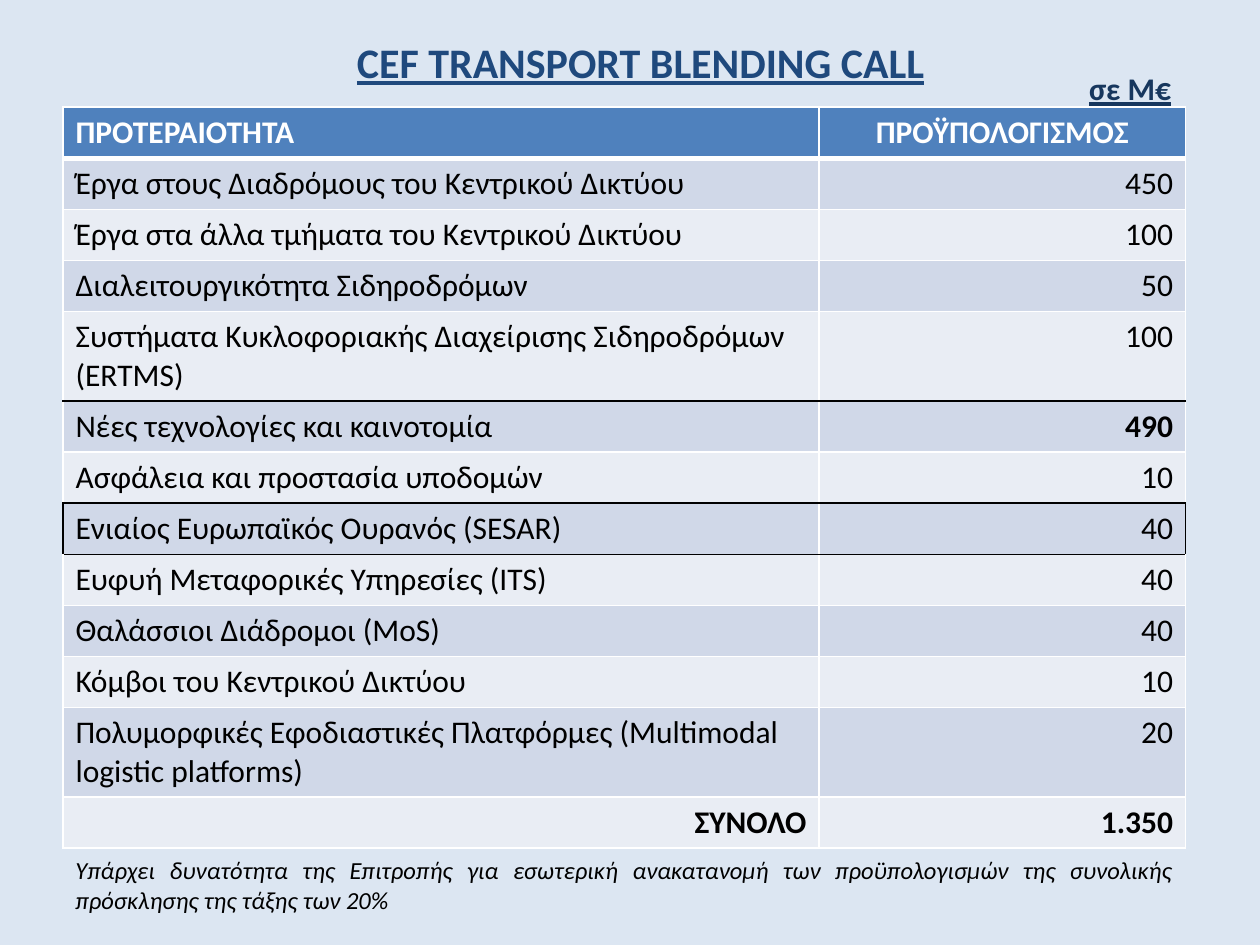
from dataclasses import dataclass
from lxml.etree import SubElement
from pptx import Presentation
from pptx.dml.color import RGBColor
from pptx.enum.text import MSO_ANCHOR as Anchor, MSO_AUTO_SIZE as AutoSize, PP_ALIGN as Align
from pptx.oxml.ns import qn
from pptx.util import Inches, Pt

TITLE = "CEF TRANSPORT BLENDING CALL"
UNIT = "σε Μ€"
NOTE = ("Υπάρχει δυνατότητα της Επιτροπής για εσωτερική ανακατανομή των "
        "προϋπολογισμών της συνολικής πρόσκλησης της τάξης των 20%")
HEADER = ("ΠΡΟΤΕΡΑΙΟΤΗΤΑ", "ΠΡΟΫΠΟΛΟΓΙΣΜΟΣ")
PRIORITIES = [
    ("Έργα στους Διαδρόμους του Κεντρικού Δικτύου", "450"),
    ("Έργα στα άλλα τμήματα του Κεντρικού Δικτύου", "100"),
    ("Διαλειτουργικότητα Σιδηροδρόμων", "50"),
    ("Συστήματα Κυκλοφοριακής Διαχείρισης Σιδηροδρόμων (ERTMS)", "100"),
    ("Νέες τεχνολογίες και καινοτομία", "490"),
    ("Ασφάλεια και προστασία υποδομών", "10"),
    ("Ενιαίος Ευρωπαϊκός Ουρανός (SESAR)", "40"),
    ("Ευφυή Μεταφορικές Υπηρεσίες (ITS)", "40"),
    ("Θαλάσσιοι Διάδρομοι (MoS)", "40"),
    ("Κόμβοι του Κεντρικού Δικτύου", "10"),
    ("Πολυμορφικές Εφοδιαστικές Πλατφόρμες (Μultimodal logistic platforms)", "20"),
]
TOTAL = ("ΣΥΝΟΛΟ", "1.350")
ROWS = [HEADER, *PRIORITIES, TOTAL]
LAST = len(ROWS) - 1
BOLD_VALUES = {"490"}
BLACK_RULES_BELOW = {4, 6, 7}
OUTLINED_ROW = 7


@dataclass(frozen=True)
class Theme:
    font: str = "Calibri"
    background: str = "DCE6F2"
    title: str = "1F497D"
    unit: str = "17375E"
    header: str = "4F81BD"
    bands: tuple = ("E9EDF4", "D0D8E8")
    white: str = "FFFFFF"
    black: str = "000000"
    title_size: int = 24
    table_size: int = 18
    note_size: int = 14


THEME = Theme()
LEFT, TABLE_TOP = 0.5, 0.85
COLUMNS = (6, 2.91)
TABLE_WIDTH, TABLE_HEIGHT = sum(COLUMNS), 5.86
ROW_HEIGHT = Pt(29.2)


def color(value):
    return RGBColor.from_string(value)


def write(frame, text, size, ink, align, bold=False, italic=False, underline=False):
    frame.text = text
    paragraph = frame.paragraphs[0]
    paragraph.alignment = align
    font = paragraph.font
    font.name, font.size = THEME.font, Pt(size)
    font.bold, font.italic, font.underline = bold, italic, underline
    font.color.rgb = color(ink)
    return paragraph


def add_label(slide, box, wrap):
    frame = slide.shapes.add_textbox(*map(Inches, box)).text_frame
    frame.word_wrap = wrap
    frame.auto_size = AutoSize.SHAPE_TO_FIT_TEXT
    return frame


def borders(row, column):
    def rule(index):
        return THEME.black if index in BLACK_RULES_BELOW else THEME.white

    side = THEME.black if row == OUTLINED_ROW else THEME.white
    return {
        "L": (side if column == 0 else THEME.white, 1),
        "R": (side if column == 1 else THEME.white, 1),
        "T": (rule(row - 1), 3 if row == 1 else 1),
        "B": (rule(row), 3 if row == 0 else 1),
    }


def draw_borders(cell, lines):
    properties = cell._tc.get_or_add_tcPr()
    for side, (ink, width) in lines.items():
        line = SubElement(properties, qn(f"a:ln{side}"), w=str(Pt(width)))
        fill = SubElement(line, qn("a:solidFill"))
        SubElement(fill, qn("a:srgbClr"), val=ink)


def cell_alignment(row, column):
    if row == 0:
        return (Align.LEFT, Align.CENTER)[column]
    return Align.RIGHT if column == 1 or row == LAST else Align.LEFT


def fill_cell(cell, row, column, text):
    header = row == 0
    draw_borders(cell, borders(row, column))
    cell.fill.solid()
    cell.fill.fore_color.rgb = color(THEME.header if header else THEME.bands[row % 2])
    write(cell.text_frame, text, THEME.table_size,
          THEME.white if header else THEME.black, cell_alignment(row, column),
          bold=row in (0, LAST) or text in BOLD_VALUES)


def add_budget_table(slide):
    shape = slide.shapes.add_table(
        len(ROWS), len(COLUMNS), Inches(LEFT), Inches(TABLE_TOP),
        Inches(TABLE_WIDTH), Inches(TABLE_HEIGHT))
    table = shape.table
    for column, width in zip(table.columns, COLUMNS):
        column.width = Inches(width)
    for row, texts in enumerate(ROWS):
        table.rows[row].height = ROW_HEIGHT
        for column, text in enumerate(texts):
            fill_cell(table.cell(row, column), row, column, text)
    shape.height = Inches(TABLE_HEIGHT)


def main():
    presentation = Presentation()
    presentation.slide_width, presentation.slide_height = Inches(10), Inches(7.5)
    slide = presentation.slides.add_slide(presentation.slide_layouts[5])
    slide.background.fill.solid()
    slide.background.fill.fore_color.rgb = color(THEME.background)

    add_budget_table(slide)

    title = slide.shapes.title
    title.left, title.top, title.width, title.height = map(Inches, (LEFT, 0.24, 9.17, 0.91))
    title.text_frame.vertical_anchor = Anchor.TOP
    title.text_frame.auto_size = AutoSize.NONE
    write(title.text_frame, TITLE, THEME.title_size, THEME.title, Align.CENTER,
          bold=True, underline=True)

    unit = add_label(slide, (8.54, 0.5, 0.86, 0.4), wrap=False)
    write(unit, UNIT, THEME.table_size, THEME.unit, Align.CENTER, bold=True, underline=True)

    note = add_label(slide, (LEFT, 6.74, TABLE_WIDTH, 0.57), wrap=True)
    paragraph = write(note, NOTE, THEME.note_size, THEME.black, Align.JUSTIFY, italic=True)
    paragraph.space_before = Pt(12)

    presentation.save("out.pptx")


if __name__ == "__main__":
    main()
